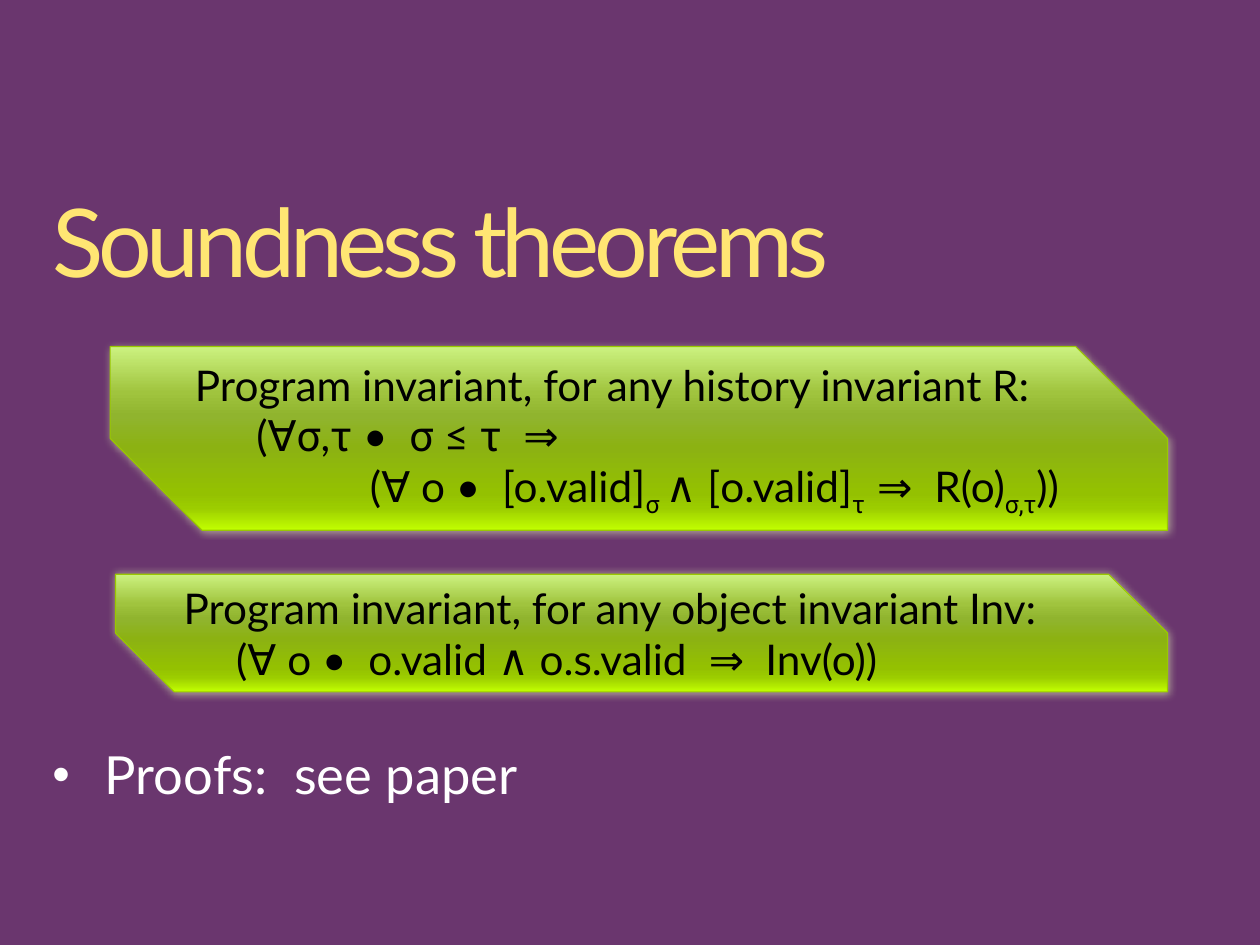
"""Build the slide on the soundness theorems."""
from itertools import groupby

from lxml import etree
from pptx import Presentation
from pptx.dml.color import RGBColor
from pptx.enum.shapes import MSO_SHAPE
from pptx.enum.text import MSO_ANCHOR, MSO_AUTO_SIZE, PP_ALIGN
from pptx.oxml import parse_xml
from pptx.oxml.ns import nsdecls, qn
from pptx.util import Pt

SNIPPED = MSO_SHAPE.SNIP_2_DIAG_RECTANGLE
TOP, MIDDLE = MSO_ANCHOR.TOP, MSO_ANCHOR.MIDDLE
NO_AUTOFIT = MSO_AUTO_SIZE.NONE
LEFT = PP_ALIGN.LEFT

PURPLE = RGBColor(0x6A, 0x36, 0x6E)
YELLOW = RGBColor(0xFF, 0xE6, 0x73)
WHITE = RGBColor(0xFF, 0xFF, 0xFF)
BLACK = RGBColor(0, 0, 0)
LIME = RGBColor(0x99, 0xC8, 0x00)
HALO = RGBColor(0xCC, 0xD0, 0xA8)
GREEN_STOPS = (
    (0, RGBColor(0xCC, 0xF2, 0x80)),
    (25, RGBColor(0xA0, 0xC4, 0x3E)),
    (38, RGBColor(0x90, 0xB4, 0x2E)),
    (55, RGBColor(0x8C, 0xB2, 0x12)),
    (80, RGBColor(0x94, 0xC1, 0x01)),
    (88, RGBColor(0x9C, 0xCD, 0x00)),
    (100, RGBColor(0xC2, 0xFF, 0x00)),
)
MAIN_FONT, GREEK_FONT = "Lato", "Roboto"
GREEK = "στ"

TITLE = "Soundness theorems"
PROOFS = "Proofs:  see paper"
# Each theorem has its box and its lines: an indent, then (text, is subscript) parts.
THEOREMS = (
    ((79.2, 393.8, 721.4, 80.6), (
        (18, (("Program invariant, for any object invariant Inv:", False),)),
        (54, (("(∀ o •  o.valid ∧ o.s.valid  ⇒  Inv(o))", False),)),
    )),
    ((75.6, 237.6, 725, 126), (
        (18, (("Program invariant, for any history invariant R:", False),)),
        (60, (("(∀σ,τ •  σ ≤ τ  ⇒", False),)),
        (138, (("(∀ o •  [o.valid]", False), ("σ ", True),
               ("∧ [o.valid]", False), ("τ  ", True),
               ("⇒  R(o)", False), ("σ,τ", True), ("))", False))),
    )),
)


def place(shape, left, top, width, height):
    shape.left, shape.top = Pt(left), Pt(top)
    shape.width, shape.height = Pt(width), Pt(height)


def set_frame(frame, anchor, side, edge):
    frame.word_wrap = True
    frame.auto_size = NO_AUTOFIT
    frame.vertical_anchor = anchor
    frame.margin_left = frame.margin_right = Pt(side)
    frame.margin_top = frame.margin_bottom = Pt(edge)


def style(font, size, color, name=MAIN_FONT):
    font.name, font.size = name, Pt(size)
    font.color.rgb = color


def add_parts(paragraph, parts):
    for text, is_subscript in parts:
        for is_greek, letters in groupby(text, lambda letter: letter in GREEK):
            run = paragraph.add_run()
            run.text = "".join(letters)
            style(run.font, 29, BLACK, GREEK_FONT if is_greek or is_subscript else MAIN_FONT)
            if is_subscript:
                run.font._element.set("baseline", "-25000")


def paint_theorem(box):
    box.shadow.inherit = False
    box.line.color.rgb = LIME
    box.line.width = Pt(0.75)
    properties = box._element.spPr
    stops = "".join(
        f'<a:gs pos="{percent * 1000}"><a:srgbClr val="{color}"/></a:gs>'
        for percent, color in GREEN_STOPS)
    gradient = parse_xml(
        f'<a:gradFill {nsdecls("a")} rotWithShape="1"><a:gsLst>{stops}</a:gsLst>'
        '<a:lin ang="5400000" scaled="0"/></a:gradFill>')
    properties.find(qn("a:prstGeom")).addnext(gradient)
    shadow = etree.SubElement(properties.find(qn("a:effectLst")), qn("a:outerShdw"),
                              blurRad=str(Pt(6)), dist="0", dir="13500000")
    tint = etree.SubElement(shadow, qn("a:srgbClr"), val=str(HALO))
    etree.SubElement(tint, qn("a:alpha"), val="70000")


def add_theorem(slide, bounds, lines):
    box = slide.shapes.add_shape(SNIPPED, *map(Pt, bounds))
    box.adjustments[0], box.adjustments[1] = 0, 0.5
    paint_theorem(box)
    frame = box.text_frame
    set_frame(frame, MIDDLE, 8.64, 4.32)
    for number, (indent, parts) in enumerate(lines):
        paragraph = frame.add_paragraph() if number else frame.paragraphs[0]
        paragraph.alignment = LEFT
        paragraph._p.get_or_add_pPr().set("marL", str(Pt(indent)))
        add_parts(paragraph, parts)


def add_title(slide):
    title = slide.shapes.title
    place(title, 36, 133.9, 792, 70.6)
    set_frame(title.text_frame, TOP, 0, 0)
    title.text_frame.text = TITLE
    paragraph = title.text_frame.paragraphs[0]
    paragraph.alignment = LEFT
    paragraph.line_spacing = 0.9
    font = paragraph.runs[0].font
    style(font, 65, YELLOW)
    font._element.set("spc", "-360")


def add_proofs(slide):
    proofs = slide.shapes.add_textbox(Pt(36), Pt(513.4), Pt(792), Pt(39.6))
    set_frame(proofs.text_frame, TOP, 0, 0)
    proofs.text_frame.text = PROOFS
    paragraph = proofs.text_frame.paragraphs[0]
    paragraph.line_spacing = 0.9
    properties = paragraph._p.get_or_add_pPr()
    properties.set("marL", str(Pt(36)))
    properties.set("indent", str(-Pt(36)))
    color = etree.SubElement(properties, qn("a:buClr"))
    etree.SubElement(color, qn("a:srgbClr"), val=str(WHITE))
    etree.SubElement(properties, qn("a:buSzPct"), val="95000")
    etree.SubElement(properties, qn("a:buFont"), typeface="Arial")
    etree.SubElement(properties, qn("a:buChar"), char="•")
    style(paragraph.runs[0].font, 36, WHITE)


def main():
    deck = Presentation()
    deck.slide_width, deck.slide_height = Pt(864), Pt(648)
    slide = deck.slides.add_slide(deck.slide_layouts[5])
    slide.background.fill.solid()
    slide.background.fill.fore_color.rgb = PURPLE
    add_title(slide)
    add_proofs(slide)
    for bounds, lines in THEOREMS:
        add_theorem(slide, bounds, lines)
    deck.save("out.pptx")


if __name__ == "__main__":
    main()
